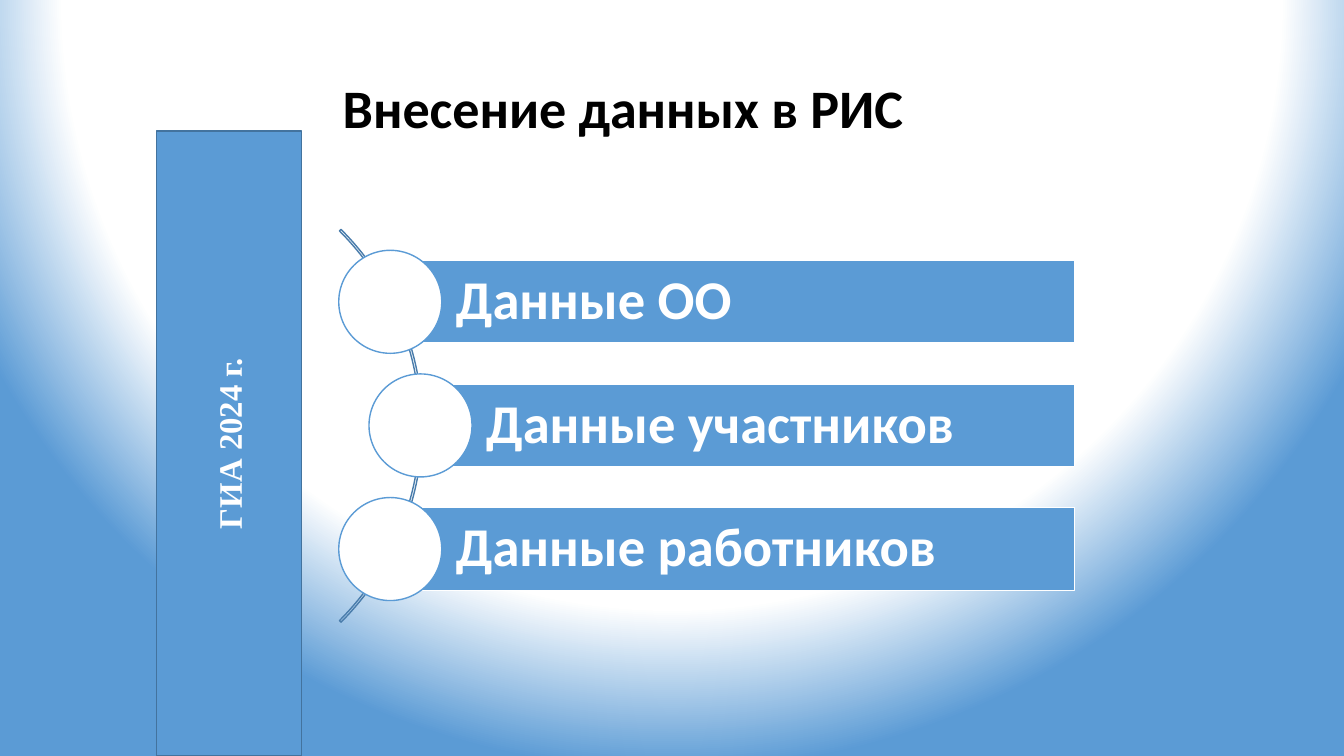
from dataclasses import dataclass

from pptx import Presentation
from pptx import util as u
from pptx.dml.color import RGBColor
from pptx.enum import shapes, text
from pptx.oxml import parse_xml
from pptx.oxml.ns import nsdecls

Pt = u.Pt
Kind = shapes.MSO_SHAPE
Align = text.PP_ALIGN


@dataclass(frozen=True)
class Theme:
    """Colours, fonts and type sizes."""
    blue: str = "5B9BD5"
    edge: str = "43739E"
    arc: str = "497CAB"
    white: str = "FFFFFF"
    black: str = "000000"
    sans: str = "Calibri"
    serif: str = "Times New Roman"
    head: float = 38.7
    item: float = 39
    side: float = 23.4


class Deck:
    """Draws styled elements on the current slide."""

    def __init__(self, theme):
        self.theme = theme
        self.prs = Presentation()
        self.prs.slide_width, self.prs.slide_height = Pt(960), Pt(540)
        self.slide = self.prs.slides.add_slide(self.prs.slide_layouts[5])

    def glow(self):
        t = self.theme
        stops = ((0, t.white), (79000, t.white), (100000, t.blue))
        marks = "".join(
            f'<a:gs pos="{pos}"><a:srgbClr val="{tone}"/></a:gs>'
            for pos, tone in stops)
        self.slide.element.cSld.insert(0, parse_xml(
            f'<p:bg {nsdecls("p", "a")}><p:bgPr><a:gradFill rotWithShape="1">'
            f'<a:gsLst>{marks}</a:gsLst><a:path path="circle">'
            '<a:fillToRect l="50000" t="-80000" r="50000" b="180000"/>'
            '</a:path></a:gradFill><a:effectLst/></p:bgPr></p:bg>'))

    def label(self, frame, words, size, tone, font, pad, align=Align.LEFT,
              lead=0.9):
        frame.word_wrap = True
        frame.auto_size = text.MSO_AUTO_SIZE.NONE
        frame.vertical_anchor = text.MSO_ANCHOR.MIDDLE
        (frame.margin_left, frame.margin_top,
         frame.margin_right, frame.margin_bottom) = map(Pt, pad)
        para = frame.paragraphs[0]
        para.alignment, para.line_spacing = align, lead
        run = para.add_run()
        run.text = words
        run.font.name, run.font.size, run.font.bold = font, Pt(size), True
        run.font.color.rgb = RGBColor.from_string(tone)

    def title(self, words, left, top, width, height):
        t, box = self.theme, self.slide.shapes.title
        box.left, box.top = Pt(left), Pt(top)
        box.width, box.height = Pt(width), Pt(height)
        self.label(box.text_frame, words, t.head, t.black, t.sans,
                   (7.2, 3.6, 7.2, 3.6))

    def shape(self, home, kind, left, top, width, height, fill, line):
        item = home.add_shape(kind, Pt(left), Pt(top), Pt(width), Pt(height))
        item.shadow.inherit = False
        if fill:
            item.fill.solid()
            item.fill.fore_color.rgb = RGBColor.from_string(fill)
        else:
            item.fill.background()
        item.line.width = Pt(1)
        item.line.color.rgb = RGBColor.from_string(line)
        return item

    def items(self, rows):
        t = self.theme
        home = self.slide.shapes.add_group_shape().shapes
        arc = self.shape(home, Kind.BLOCK_ARC, -95, 105.8, 396.7, 396.7,
                         None, t.arc)
        for num, value in enumerate((189, 27, 0.004)):
            arc.adjustments[num] = value
        size, step, right = 73.6, 88.3, 767.7
        for num, (words, shift) in enumerate(rows):
            left, mid = 278.8 + shift, 215.6 + num * step
            bar = self.shape(home, Kind.RECTANGLE, left, mid - 29.5,
                             right - left, 59, t.blue, t.white)
            self.label(bar.text_frame, words, t.item, t.white, t.sans,
                       (46.8, 7.9, 7.9, 7.9))
            self.shape(home, Kind.OVAL, left - size / 2, mid - size / 2,
                       size, size, t.white, t.blue)

    def side(self, words, left, top, width, height):
        t = self.theme
        bar = self.shape(self.slide.shapes, Kind.RECTANGLE, left, top, width,
                         height, t.blue, t.edge)
        self.label(bar.text_frame, words, t.side, t.white, t.serif,
                   (4.3, 2.2, 4.3, 2.2), Align.CENTER, 1.0)
        bar.element.txBody.bodyPr.set("vert", "vert270")


def main():
    deck = Deck(Theme())
    deck.glow()
    deck.title("Внесение данных в РИС", 237.6, 15.8, 613.4, 126.7)
    deck.items((("Данные ОО", 0), ("Данные участников", 21.6),
                ("Данные работников", 0)))
    deck.side("ГИА 2024 г.", 111.6, 93.6, 103.7, 446.4)
    deck.prs.save("out.pptx")


if __name__ == "__main__":
    main()
